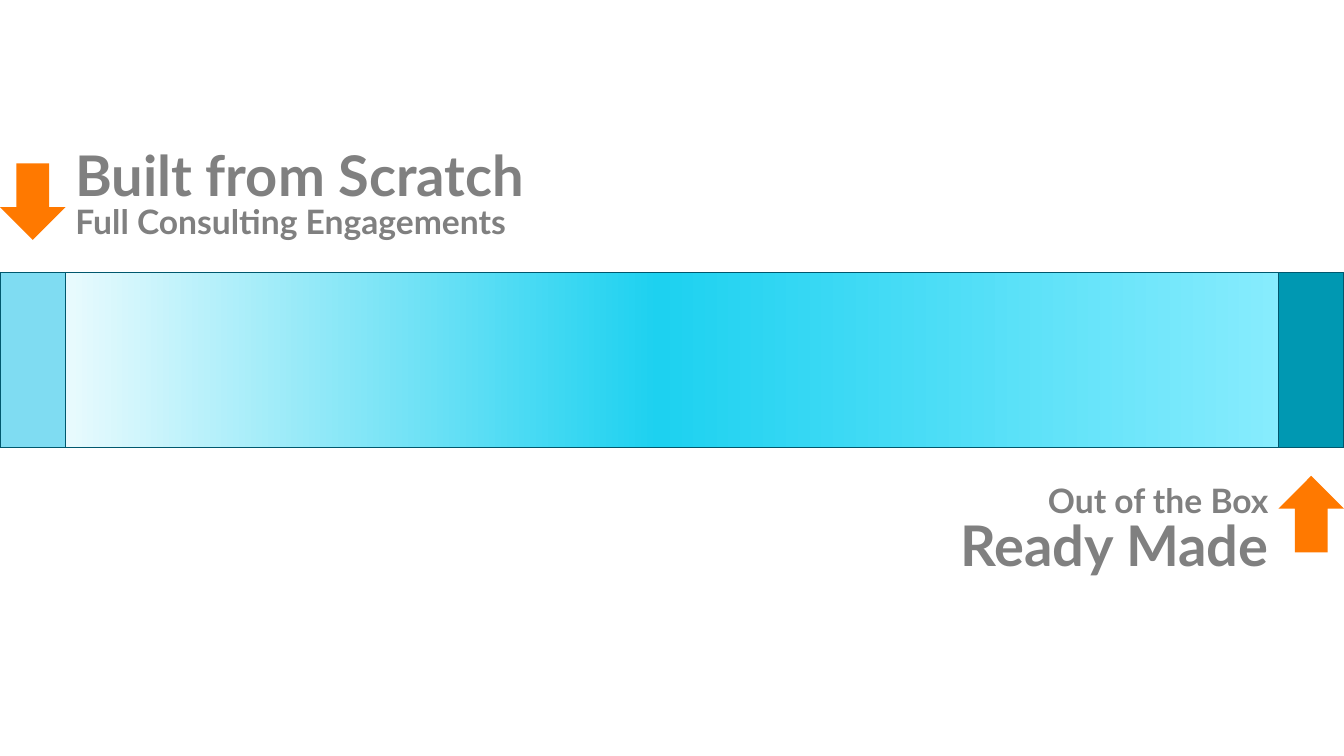
import copy

import pptx
import pptx.dml.color
import pptx.enum.shapes
import pptx.enum.text
import pptx.util

RGBColor = pptx.dml.color.RGBColor
Inches = pptx.util.Inches
SHAPES = pptx.enum.shapes.MSO_SHAPE
ALIGN = pptx.enum.text.PP_ALIGN

GREY = RGBColor(0x80, 0x80, 0x80)
ORANGE = RGBColor(0xFF, 0x79, 0x00)
OUTLINE = RGBColor(0x00, 0x58, 0x6E)
PALE_BLUE = RGBColor(0x7F, 0xDC, 0xF2)
DEEP_TEAL = RGBColor(0x00, 0x98, 0xB2)
SPECTRUM = [
    (0, RGBColor(0xFF, 0xFF, 0xFF)),
    (0.49, RGBColor(0x1D, 0xD1, 0xF0)),
    (1, RGBColor(0x92, 0xEF, 0xFF)),
]

WIDTH, HEIGHT = 13.33, 7.5
END = 0.65  # width of the column at each end of the bar
RIGHT_END = WIDTH - END
BAR_TOP, BAR_HEIGHT = 2.7, 1.74
ARROW_LENGTH = 0.76
HEADING = {"size": pptx.util.Pt(40), "height": 0.77}
SUBHEADING = {"size": pptx.util.Pt(24), "height": 0.5}


def add_label(page, text, left, top, width, style, align=ALIGN.LEFT):
    box = page.shapes.add_textbox(
        *map(Inches, (left, top, width, style["height"])))
    box.text_frame.word_wrap = True
    para = box.text_frame.paragraphs[0]
    para.alignment = align
    span = para.add_run()
    span.text = text
    font = {"name": "Lato", "size": style["size"], "bold": True}
    for name, value in font.items():
        setattr(span.font, name, value)
    span.font.color.rgb = GREY


def add_bar(page, left, width):
    bar = page.shapes.add_shape(
        SHAPES.RECTANGLE, *map(Inches, (left, BAR_TOP, width, BAR_HEIGHT)))
    bar.shadow.inherit = False
    bar.line.color.rgb = OUTLINE
    bar.line.width = pptx.util.Pt(0.75)
    return bar


def add_end(page, left, color):
    end = add_bar(page, left, END)
    end.fill.solid()
    end.fill.fore_color.rgb = color


def add_spectrum(page):
    """Draw the full-width bar with a three-stop horizontal gradient."""
    fill = add_bar(page, 0, WIDTH).fill
    fill.gradient()
    fill.gradient_angle = 0
    stop_list = fill._fill._gradFill.gsLst
    stop_list.append(copy.deepcopy(stop_list[-1]))
    for stop, (position, color) in zip(fill.gradient_stops, SPECTRUM):
        stop.position = position
        stop.color.rgb = color


def add_arrow(page, center_x, center_y, rotation):
    arrow = page.shapes.add_shape(
        SHAPES.RIGHT_ARROW,
        Inches(center_x - ARROW_LENGTH / 2), Inches(center_y - END / 2),
        Inches(ARROW_LENGTH), Inches(END))
    arrow.rotation = rotation
    arrow.shadow.inherit = False
    arrow.fill.solid()
    arrow.fill.fore_color.rgb = ORANGE
    arrow.line.fill.background()


def main():
    deck = pptx.Presentation()
    deck.slide_width, deck.slide_height = Inches(WIDTH), Inches(HEIGHT)
    page = deck.slides.add_slide(deck.slide_layouts.get_by_name("Blank"))

    add_label(page, "Built from Scratch", END, 1.35, 7.36, HEADING)
    add_label(page, "Ready Made", RIGHT_END - 6.06, 5.02, 6.06, HEADING,
              ALIGN.RIGHT)
    add_arrow(page, WIDTH - END / 2, 5.1, 270)
    add_arrow(page, END / 2, 2, 90)
    add_spectrum(page)
    add_end(page, 0, PALE_BLUE)
    add_end(page, RIGHT_END, DEEP_TEAL)
    add_label(page, "Full Consulting Engagements", END, 1.94, 5.56, SUBHEADING)
    add_label(page, "Out of the Box", RIGHT_END - 5.86, 4.71, 5.86, SUBHEADING,
              ALIGN.RIGHT)

    deck.save("out.pptx")


if __name__ == "__main__":
    main()
